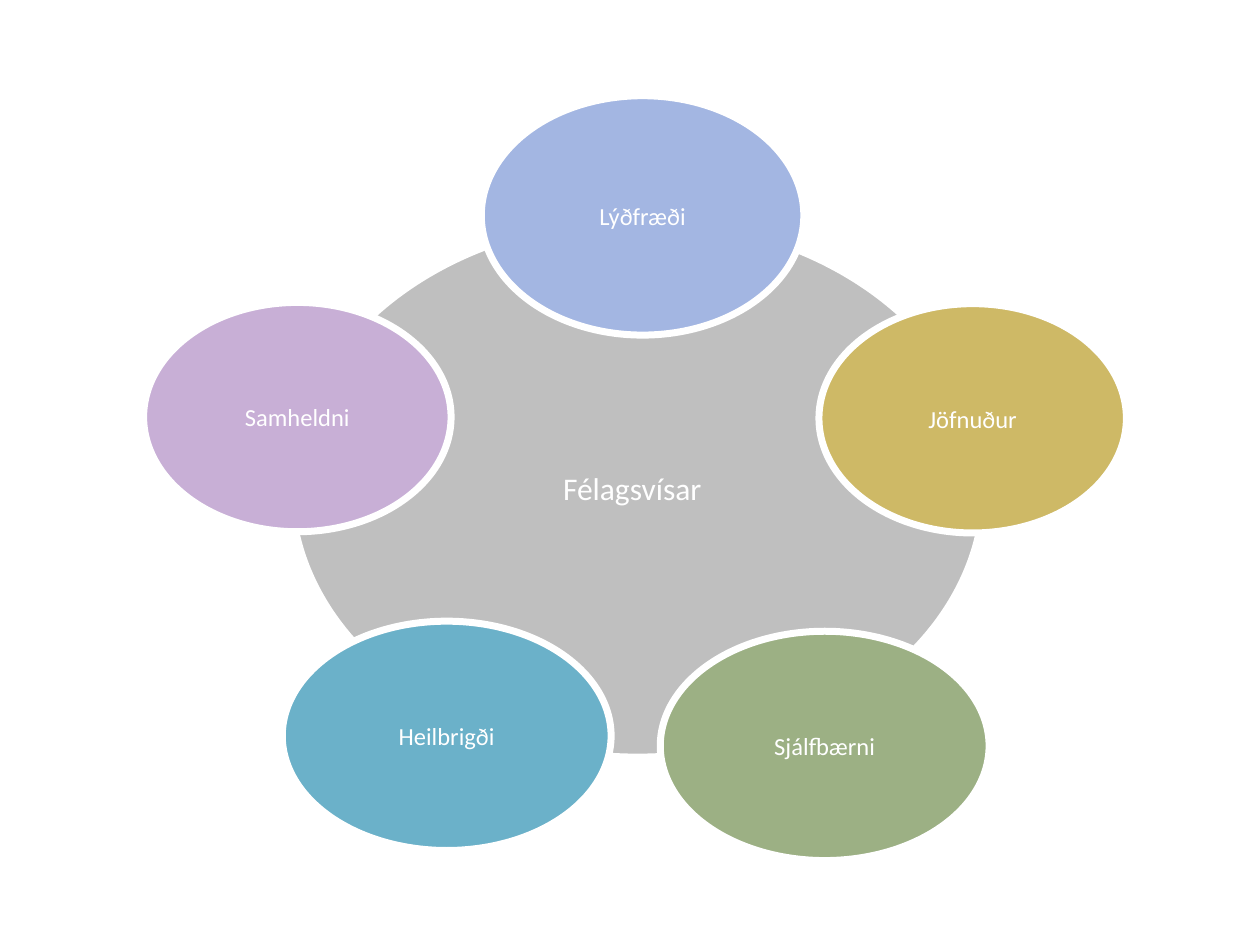
from pptx import Presentation
from pptx.dml.color import RGBColor
from pptx.enum.shapes import MSO_SHAPE
from pptx.enum.text import MSO_ANCHOR, MSO_AUTO_SIZE, PP_ALIGN
from pptx.util import Inches, Pt

WHITE = RGBColor(0xFF, 0xFF, 0xFF)
GREY = RGBColor(0xBF, 0xBF, 0xBF)
BLUE = RGBColor(0xA3, 0xB6, 0xE2)
PURPLE = RGBColor(0xC8, 0xAF, 0xD6)
TEAL = RGBColor(0x6B, 0xB1, 0xC9)
GREEN = RGBColor(0x9C, 0xB0, 0x84)
GOLD = RGBColor(0xCE, 0xB9, 0x66)
FONT = "Calibri"

# Content: label, colour, (left, top, width, height) in inches
HUB = (2.2, 1.63, 5.72, 4.49)
TITLE, TITLE_BOX = "Félagsvísar", (4.37, 3.67, 1.42, 0.4)
INDICATORS = [
    ("Lýðfræði", BLUE, (3.82, 0.76, 2.56, 1.9)),
    ("Samheldni", PURPLE, (1.14, 2.4, 2.44, 1.82)),
    ("Heilbrigði", TEAL, (2.24, 4.93, 2.61, 1.82)),
    ("Sjálfbærni", GREEN, (5.24, 5.01, 2.61, 1.82)),
    ("Jöfnuður", GOLD, (6.5, 2.41, 2.44, 1.82)),
]


def add_ellipse(slide, box, color, line_width):
    sp = slide.shapes.add_shape(MSO_SHAPE.OVAL, *map(Inches, box))
    sp.shadow.inherit = False
    sp.fill.solid()
    sp.fill.fore_color.rgb = color
    sp.line.color.rgb = WHITE
    sp.line.width = Pt(line_width)
    return sp


def add_text(tf, text, size, align):
    p = tf.paragraphs[0]
    p.alignment = align
    r = p.add_run()
    r.text = text
    r.font.name = FONT
    r.font.size = Pt(size)
    r.font.color.rgb = WHITE


prs = Presentation()
prs.slide_width, prs.slide_height = Inches(10), Inches(7.5)
slide = prs.slides.add_slide(prs.slide_layouts[6])

# Central hub
add_ellipse(slide, HUB, GREY, 20)

# Surrounding indicators
for label, color, box in INDICATORS:
    tf = add_ellipse(slide, box, color, 4).text_frame
    tf.vertical_anchor = MSO_ANCHOR.MIDDLE
    add_text(tf, label, 14, PP_ALIGN.CENTER)

# Hub title
tf = slide.shapes.add_textbox(*map(Inches, TITLE_BOX)).text_frame
tf.word_wrap = True
tf.auto_size = MSO_AUTO_SIZE.SHAPE_TO_FIT_TEXT
add_text(tf, TITLE, 18, PP_ALIGN.LEFT)

prs.save("out.pptx")
